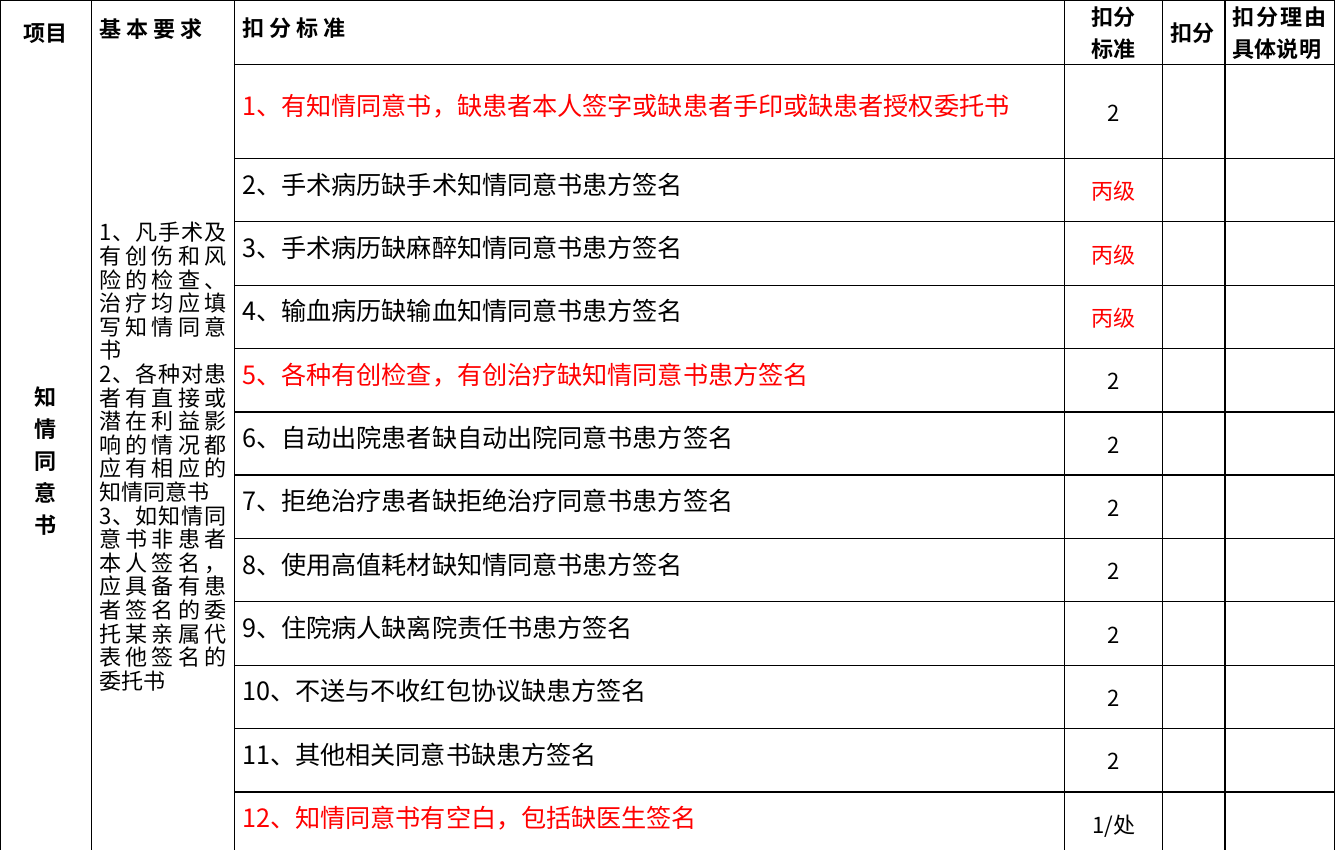
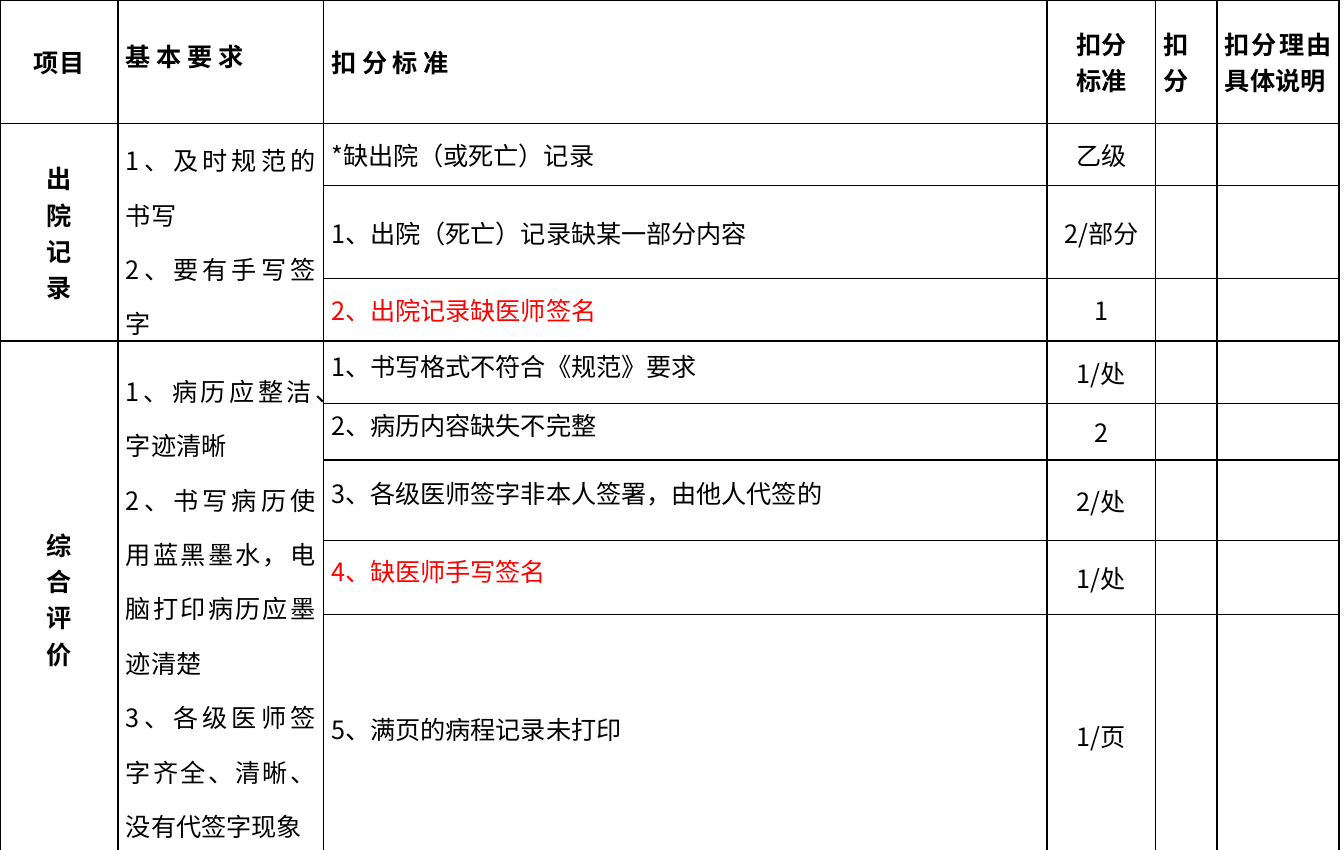
from lxml.etree import SubElement
from pptx import Presentation
from pptx.dml.color import RGBColor
from pptx.enum.lang import MSO_LANGUAGE_ID
from pptx.enum.text import MSO_ANCHOR, PP_ALIGN
from pptx.oxml.ns import qn
from pptx.util import Pt

PX = 6350  # 144 px to the inch
BLACK, RED, WHITE = "000000", "FF0000", "FFFFFF"
SERIF, SANS = "Times New Roman", "Noto Sans CJK SC"
MID, JUST = PP_ALIGN.CENTER, PP_ALIGN.JUSTIFY
HEAD = ["项目", "基 本 要 求", "扣 分 标 准", "扣分\n标准", "扣分", "扣分理由具体说明"]


def tint(code):
    return RGBColor.from_string(code)


def write(cell, text, size=16, ink=BLACK, bold=False, align=JUST, gap=None):
    """Fill a cell; a leading number or star is set in the sans face."""
    frame = cell.text_frame
    for i, line in enumerate(text.split("\n")):
        para = frame.paragraphs[0] if i == 0 else frame.add_paragraph()
        para.alignment = align
        if gap:
            para.line_spacing = gap
        para._p.get_or_add_pPr().set("hangingPunct", "1")
        rest = line.lstrip("0123456789/*")
        lead = line[:len(line) - len(rest)]
        for part, face in ((lead, SANS), (rest, SERIF)):
            if not part:
                continue
            run = para.add_run()
            run.text = part
            font = run.font
            font.size, font.bold, font.name = Pt(size), bold, face
            font.color.rgb = tint(ink)
            font.language_id = MSO_LANGUAGE_ID.SIMPLIFIED_CHINESE
            SubElement(run._r.get_or_add_rPr(), qn("a:ea"), typeface=SANS)


# Content: each group is label, needs, needs gap, item gap, items
consent = (
    "知\n情\n同\n意\n书",
    "1、凡手术及有创伤和风险的检查、治疗均应填写知情同意书\n"
    "2、各种对患者有直接或潜在利益影响的情况都应有相应的知情同意书\n"
    "3、如知情同意书非患者本人签名，应具备有患者签名的委托某亲属代表他签名的委托书",
    Pt(15), Pt(14), [
        ("1、有知情同意书，缺患者本人签字或缺患者手印或缺患者授权委托书", "2", RED),
        ("2、手术病历缺手术知情同意书患方签名", "丙级", BLACK),
        ("3、手术病历缺麻醉知情同意书患方签名", "丙级", BLACK),
        ("4、输血病历缺输血知情同意书患方签名", "丙级", BLACK),
        ("5、各种有创检查，有创治疗缺知情同意书患方签名", "2", RED),
        ("6、自动出院患者缺自动出院同意书患方签名", "2", BLACK),
        ("7、拒绝治疗患者缺拒绝治疗同意书患方签名", "2", BLACK),
        ("8、使用高值耗材缺知情同意书患方签名", "2", BLACK),
        ("9、住院病人缺离院责任书患方签名", "2", BLACK),
        ("10、不送与不收红包协议缺患方签名", "2", BLACK),
        ("11、其他相关同意书缺患方签名", "2", BLACK),
        ("12、知情同意书有空白，包括缺医生签名", "1/处", RED),
    ])
leave = (
    "出\n院\n记\n录",
    "1、及时规范的书写\n2、要有手写签字",
    1.5, None, [
        ("*缺出院（或死亡）记录", "乙级", BLACK),
        ("1、出院（死亡）记录缺某一部分内容", "2/部分", BLACK),
        ("2、出院记录缺医师签名", "1", RED),
    ])
review = (
    "综\n合\n评\n价",
    "1、病历应整洁、字迹清晰\n"
    "2、书写病历使用蓝黑墨水，电脑打印病历应墨迹清楚\n"
    "3、各级医师签字齐全、清晰、没有代签字现象",
    1.5, Pt(14), [
        ("1、书写格式不符合《规范》要求", "1/处", BLACK),
        ("2、病历内容缺失不完整", "2", BLACK),
        ("3、各级医师签字非本人签署，由他人代签的", "2/处", BLACK),
        ("4、缺医师手写签名", "1/处", RED),
        ("5、满页的病程记录未打印", "1/页", BLACK),
    ])

# Pages: column widths, row heights, side text size, heading gap, open head, groups
pages = [
    ([116, 182, 1054, 125, 79, 139], [62, 120] + [80, 81] * 5 + [80],
     14, Pt(14), True, [consent]),
    ([150, 261, 919, 138, 78, 155], [157, 79, 118, 68, 79, 72, 102, 94, 308],
     16, None, False, [leave, review]),
]

deck = Presentation()
deck.slide_width, deck.slide_height = 1707 * PX, 1080 * PX

for wides, highs, size, gap, joined, groups in pages:
    slide = deck.slides.add_slide(deck.slide_layouts[6])
    grid = slide.shapes.add_table(len(highs), len(wides), 0, 0,
                                  sum(wides) * PX, sum(highs) * PX).table
    grid.first_row = grid.horz_banding = False
    for col, wide in zip(grid.columns, wides):
        col.width = wide * PX
    for row, high in zip(grid.rows, highs):
        row.height = high * PX

    # Heading row
    for c, text in enumerate(HEAD):
        write(grid.cell(0, c), text, size=size, bold=True,
              align=MID if c in (0, 3) else JUST,
              gap={1: Pt(15), 2: gap}.get(c))

    # Groups with merged side cells
    top = 1
    for label, needs, space, pitch, items in groups:
        last = top + len(items) - 1
        for c in (0, 1):
            grid.cell(top, c).merge(grid.cell(last, c))
        write(grid.cell(top, 0), label, size=size, bold=True, align=MID)
        write(grid.cell(top, 1), needs, size=size, gap=space)
        for r, (item, mark, ink) in enumerate(items, top):
            write(grid.cell(r, 2), item, ink=ink, gap=pitch)
            write(grid.cell(r, 3), mark, size=size, align=MID,
                  ink=RED if mark == "丙级" else BLACK)
        top = last + 1

    # Borders, margins and fill
    for r in range(len(highs)):
        for c in range(len(wides)):
            cell = grid.cell(r, c)
            bare = joined and c < 2
            below = r + 1 < len(highs) and grid.cell(r + 1, c).is_spanned
            edges = {"L": True, "R": True,
                     "T": not (cell.is_spanned or bare and r == 1),
                     "B": not (below or bare and r == 0)}
            props = cell._tc.get_or_add_tcPr()
            for side, drawn in edges.items():
                line = SubElement(props, qn("a:ln" + side), w=str(Pt(1)))
                if drawn:
                    fill = SubElement(line, qn("a:solidFill"))
                    SubElement(fill, qn("a:srgbClr"), val=BLACK)
                else:
                    SubElement(line, qn("a:noFill"))
            cell.fill.solid()
            cell.fill.fore_color.rgb = tint(WHITE)
            cell.margin_left = cell.margin_right = 10 * PX
            cell.margin_top = cell.margin_bottom = 0
            cell.vertical_anchor = MSO_ANCHOR.MIDDLE

deck.save("out.pptx")
